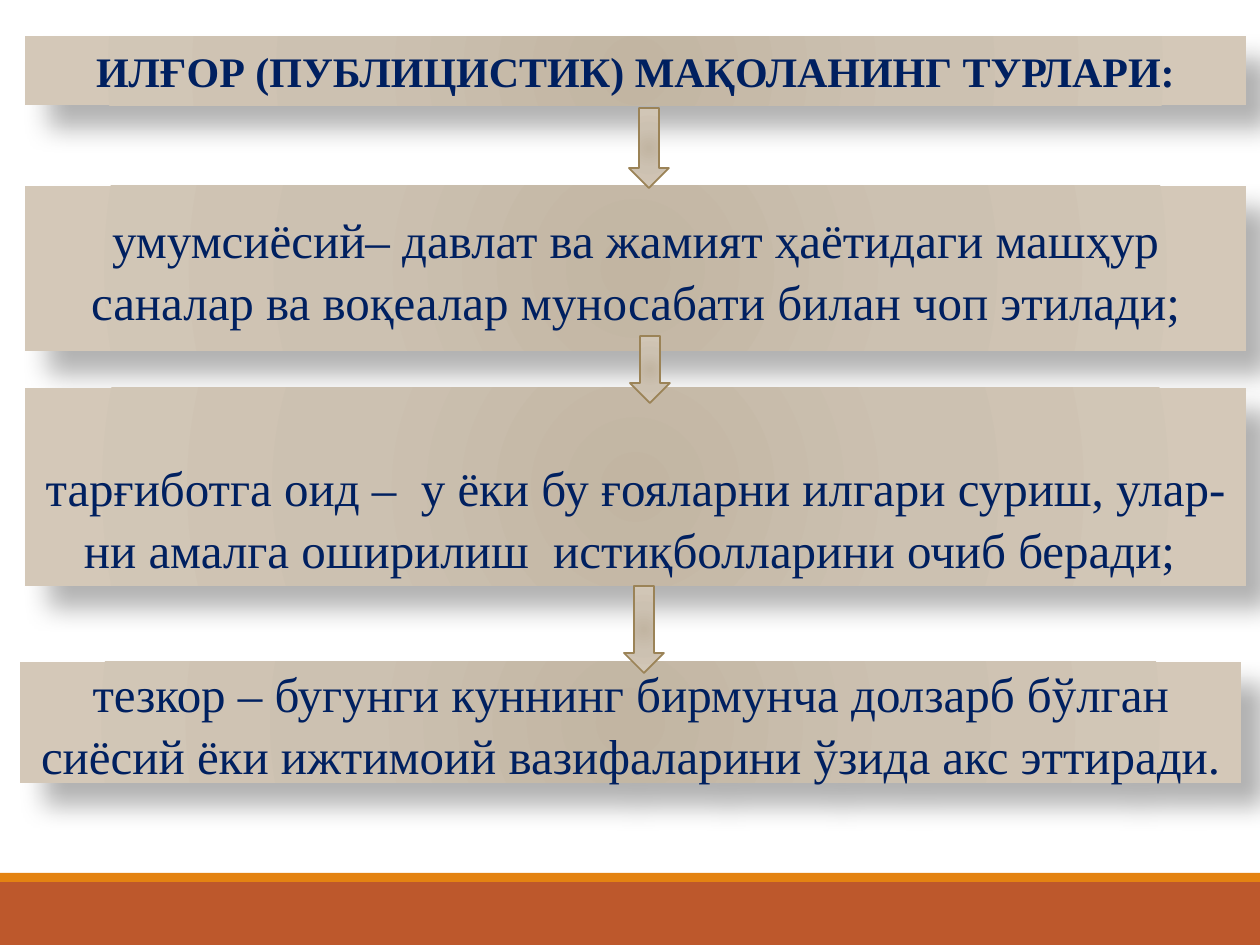
"""Build a slide showing the kinds of leading article as a chain of boxes."""
from lxml import etree
from pptx import Presentation
from pptx.dml.color import RGBColor
from pptx.enum.shapes import MSO_SHAPE
from pptx.enum.text import MSO_ANCHOR, PP_ALIGN
from pptx.oxml import parse_xml
from pptx.oxml.ns import nsdecls, qn
from pptx.util import Emu, Pt

RECTANGLE = MSO_SHAPE.RECTANGLE
ROUNDED = MSO_SHAPE.ROUNDED_RECTANGLE
DOWN_ARROW = MSO_SHAPE.DOWN_ARROW
MIDDLE = MSO_ANCHOR.MIDDLE
CENTER = PP_ALIGN.CENTER

PX = 914400 // 126
FONT = "Times New Roman"
TEXT_COLOR = "002060"
ARROW_LINE = "9B8357"
GRADIENT = [(0, "C2B5A2"), (45, "CCC1B1"), (100, "D4C8B8")]
SHADOW = {"blurRad": Pt(15), "dist": Pt(18), "dir": 45 * 60000}
SHADOW_ALPHA = 30
BOX_WIDTH, ARROW_WIDTH = 1221, 40
INSET = 6

BANDS = [(882, 63, "BD582C"), (873, 9, "E48312")]
BOXES = [
    {"at": (25, 36, 69), "size": 24, "bold": True, "spacing": 1, "lead": 0,
     "text": "ИЛҒОР (ПУБЛИЦИСТИК) МАҚОЛАНИНГ ТУРЛАРИ:"},
    {"at": (25, 186, 165), "size": 28, "bold": False, "spacing": 1.05, "lead": 0,
     "text": "умумсиёсий– давлат ва жамият ҳаётидаги машҳур саналар ва "
             "воқеалар муносабати билан чоп этилади;"},
    {"at": (25, 388, 198), "size": 28, "bold": False, "spacing": 1.05, "lead": 59,
     "text": "тарғиботга оид –  у ёки бу ғояларни илгари суриш, улар-ни "
             "амалга оширилиш  истиқболларини очиб беради; "},
    {"at": (20, 662, 121), "size": 28, "bold": False, "spacing": 1.05, "lead": 0,
     "text": "тезкор – бугунги куннинг бирмунча долзарб бўлган сиёсий ёки "
             "ижтимоий вазифаларини ўзида акс эттиради."},
]
ARROWS = [(629, 108, 80), (630, 336, 67), (624, 586, 87)]


def px(value):
    return Emu(value * PX)


def color(value):
    return RGBColor.from_string(value)


def add_shape(slide, kind, left, top, width, height):
    shape = slide.shapes.add_shape(kind, px(left), px(top), px(width), px(height))
    shape.shadow.inherit = False
    shape.line.fill.background()
    return shape


def fill_radial(shape):
    stops = "".join(
        f'<a:gs pos="{position * 1000}"><a:srgbClr val="{value}"/></a:gs>'
        for position, value in GRADIENT)
    gradient = parse_xml(
        f'<a:gradFill {nsdecls("a")} rotWithShape="1"><a:gsLst>{stops}</a:gsLst>'
        '<a:path path="circle"><a:fillToRect l="100000" t="100000" '
        'r="100000" b="100000"/></a:path></a:gradFill>')
    shape.fill.background()
    properties = shape.element.spPr
    properties.replace(properties.find(qn("a:noFill")), gradient)


def add_shadow(shape):
    effects = shape.element.spPr.find(qn("a:effectLst"))
    shadow = etree.SubElement(effects, qn("a:outerShdw"), algn="tl", rotWithShape="0")
    for name, value in SHADOW.items():
        shadow.set(name, str(int(value)))
    tint = etree.SubElement(shadow, qn("a:srgbClr"), val="000000")
    etree.SubElement(tint, qn("a:alpha"), val=str(SHADOW_ALPHA * 1000))


def add_box(slide, box):
    left, top, height = box["at"]
    shape = add_shape(slide, ROUNDED, left, top, BOX_WIDTH, height)
    shape.adjustments[0] = 0
    fill_radial(shape)
    add_shadow(shape)
    frame = shape.text_frame
    frame.word_wrap = True
    frame.vertical_anchor = MIDDLE
    frame.margin_top = px(INSET + box["lead"])
    frame.margin_bottom = px(INSET)
    paragraph = frame.paragraphs[0]
    paragraph.alignment = CENTER
    paragraph.line_spacing = box["spacing"]
    run = paragraph.add_run()
    run.text = box["text"]
    run.font.name = FONT
    run.font.size = Pt(box["size"])
    run.font.bold = box["bold"]
    run.font.color.rgb = color(TEXT_COLOR)


def add_arrow(slide, left, top, height):
    shape = add_shape(slide, DOWN_ARROW, left, top, ARROW_WIDTH, height)
    fill_radial(shape)
    shape.line.color.rgb = color(ARROW_LINE)
    shape.line.width = Pt(1)


def main():
    presentation = Presentation()
    presentation.slide_width, presentation.slide_height = px(1260), px(945)
    slide = presentation.slides.add_slide(presentation.slide_layouts[6])
    for top, height, value in BANDS:
        band = add_shape(slide, RECTANGLE, 0, top, 1260, height)
        band.fill.solid()
        band.fill.fore_color.rgb = color(value)
    for box in BOXES:
        add_box(slide, box)
    for arrow in ARROWS:
        add_arrow(slide, *arrow)
    presentation.save("out.pptx")


if __name__ == "__main__":
    main()
